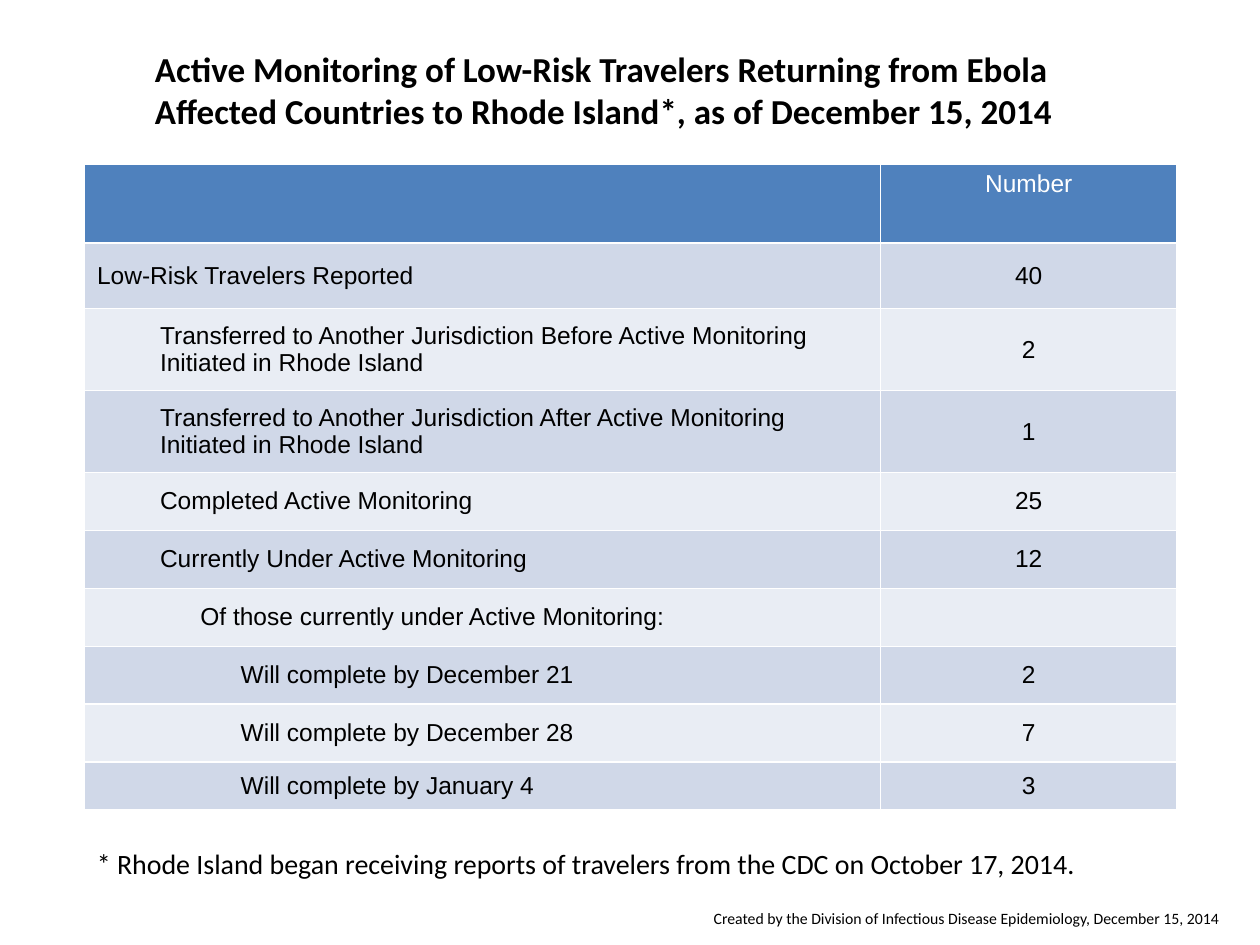
import pptx
import pptx.util
import pptx.dml.color
import pptx.enum.text

Inches = pptx.util.Inches
Pt = pptx.util.Pt
RGBColor = pptx.dml.color.RGBColor
ALIGN = pptx.enum.text.PP_ALIGN
ANCHOR = pptx.enum.text.MSO_ANCHOR

BLACK = RGBColor(0x00, 0x00, 0x00)
WHITE = RGBColor(0xFF, 0xFF, 0xFF)
HEADER_BLUE = RGBColor(0x4F, 0x81, 0xBD)
BANDS = [RGBColor(0xD0, 0xD8, 0xE8), RGBColor(0xE9, 0xED, 0xF4)]

TITLE = [
    "Active Monitoring of Low-Risk Travelers Returning from Ebola",
    "Affected Countries to Rhode Island*, as of December 15, 2014",
]
FOOTNOTE = "* Rhode Island began receiving reports of travelers from the CDC on October 17, 2014."
CREDIT = "Created by the Division of Infectious Disease Epidemiology, December 15, 2014"

HEADER = ("", "Number")
HEADER_HEIGHT = 0.63
# label, number, outline depth, row height
ROWS = [
    ("Low-Risk Travelers Reported", "40", 0, 0.52),
    ("Transferred to Another Jurisdiction Before Active Monitoring Initiated in Rhode Island", "2", 1, 0.65),
    ("Transferred to Another Jurisdiction After Active Monitoring Initiated in Rhode Island", "1", 1, 0.65),
    ("Completed Active Monitoring", "25", 1, 0.46),
    ("Currently Under Active Monitoring", "12", 1, 0.46),
    ("Of those currently under Active Monitoring:", "", 2, 0.46),
    ("Will complete by December 21", "2", 3, 0.46),
    ("Will complete by December 28", "7", 3, 0.46),
    ("Will complete by January 4", "3", 3, 0.38),
]
INDENTS = [0, 0.5, 0.82, 1.14]
COLUMN_WIDTHS = [6.32, 2.35]


def write(frame, lines, size, font="Calibri", color=BLACK, bold=False,
          align=ALIGN.LEFT, indent=0):
    for index, line in enumerate(lines):
        para = frame.paragraphs[0] if index == 0 else frame.add_paragraph()
        para.alignment = align
        if indent:
            properties = para._p.get_or_add_pPr()
            properties.set("marL", str(Inches(indent)))
            properties.set("indent", "0")
        span = para.add_run()
        span.text = line
        span.font.name = font
        span.font.size = Pt(size)
        span.font.bold = bold
        span.font.color.rgb = color


def fill_cell(cell, text, fill, anchor=ANCHOR.MIDDLE, **text_format):
    cell.fill.solid()
    cell.fill.fore_color.rgb = fill
    cell.vertical_anchor = anchor
    if text:
        write(cell.text_frame, [text], 14, font="Arial", **text_format)


def add_note(page, text, left, top, width, height, **text_format):
    box = page.shapes.add_textbox(Inches(left), Inches(top), Inches(width), Inches(height))
    box.text_frame.word_wrap = False
    write(box.text_frame, [text], **text_format)


def add_monitoring_table(page):
    heights = [HEADER_HEIGHT] + [row[3] for row in ROWS]
    table = page.shapes.add_table(
        len(heights), len(COLUMN_WIDTHS), Inches(0.67), Inches(1.3),
        Inches(sum(COLUMN_WIDTHS)), Inches(sum(heights))).table
    for column, width in zip(table.columns, COLUMN_WIDTHS):
        column.width = Inches(width)
    for row, height in zip(table.rows, heights):
        row.height = Inches(height)

    for column, text in enumerate(HEADER):
        fill_cell(table.cell(0, column), text, HEADER_BLUE, anchor=ANCHOR.TOP,
                  color=WHITE, align=ALIGN.CENTER)
    for index, (label, number, depth, _) in enumerate(ROWS):
        band = BANDS[index % 2]
        fill_cell(table.cell(index + 1, 0), label, band, indent=INDENTS[depth])
        fill_cell(table.cell(index + 1, 1), number, band, align=ALIGN.CENTER)


def main():
    deck = pptx.Presentation()
    deck.slide_width, deck.slide_height = Inches(10), Inches(7.5)
    page = deck.slides.add_slide(deck.slide_layouts[5])

    title = page.shapes.title
    title.left, title.top = Inches(1.13), Inches(0.33)
    title.width, title.height = Inches(7.75), Inches(1)
    title.text_frame.word_wrap = False
    title.text_frame.auto_size = pptx.enum.text.MSO_AUTO_SIZE.NONE
    title.text_frame.vertical_anchor = ANCHOR.TOP
    write(title.text_frame, TITLE, 20, bold=True)

    add_monitoring_table(page)
    add_note(page, CREDIT, 4.75, 7.16, 5.02, 0.25, size=9, align=ALIGN.RIGHT)
    add_note(page, FOOTNOTE, 0.67, 6.67, 8.02, 0.37, size=16)
    deck.save("out.pptx")


if __name__ == "__main__":
    main()
